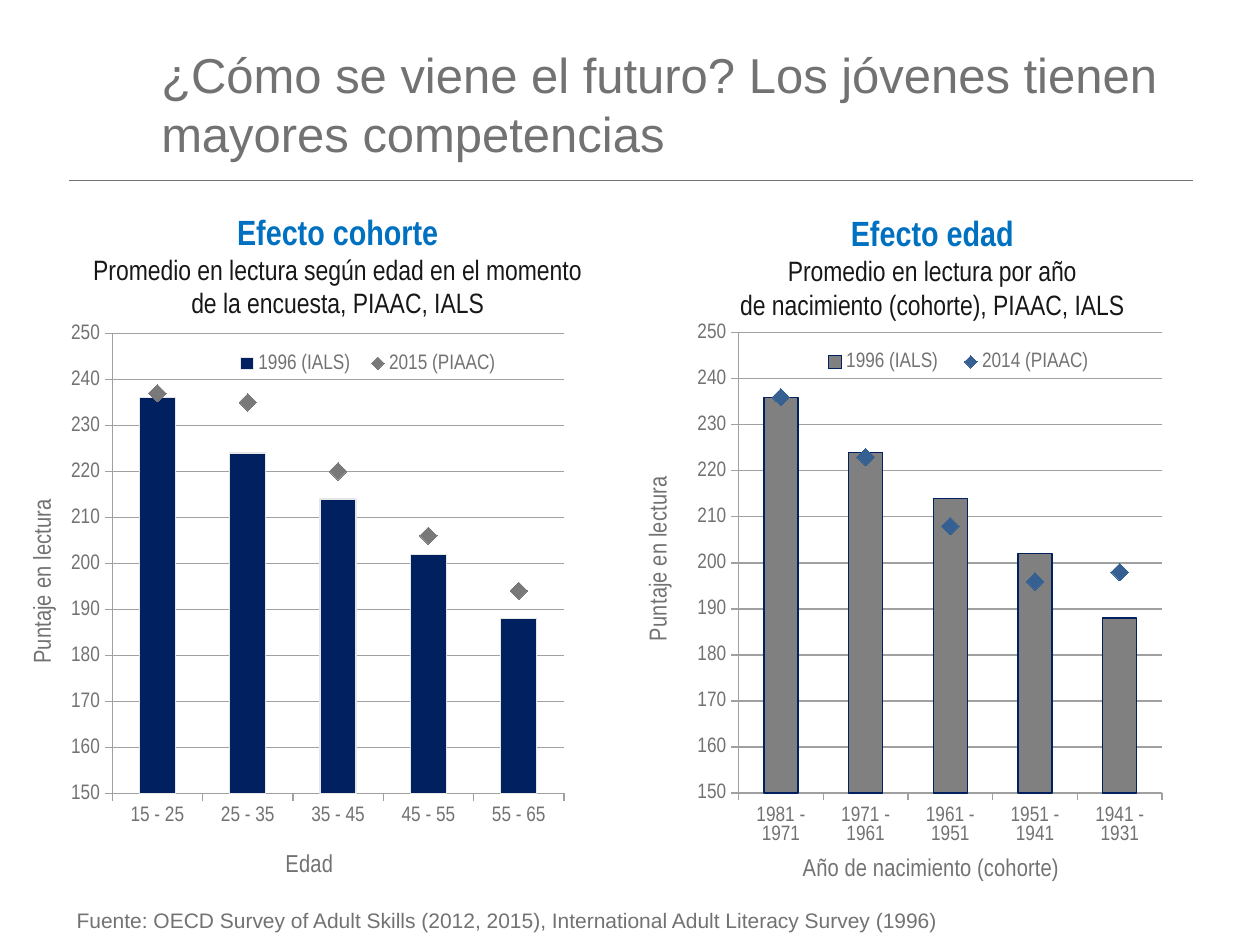
from dataclasses import dataclass

import pptx
import pptx.chart.data
import pptx.dml.color
import pptx.enum.chart
import pptx.enum.shapes
import pptx.enum.text
import pptx.oxml
import pptx.oxml.ns
import pptx.util
from pptx.util import Inches, Pt

qn = pptx.oxml.ns.qn


@dataclass(frozen=True)
class Theme:
    grey: str = "727272"
    blue: str = "0070C0"
    ink: str = "171717"
    grid: str = "A0A0A0"
    navy: str = "002060"
    body_font: str = "Arial"
    chart_font: str = "Arial Narrow"
    title: int = 28
    heading: int = 20
    subheading: int = 16
    axis_title: int = 14
    label: int = 12


THEME = Theme()


def rgb(colour):
    return pptx.dml.color.RGBColor.from_string(colour)


def style(font, name, size, colour, bold=False):
    font.name, font.size, font.bold = name, Pt(size), bold
    font.color.rgb = rgb(colour)


def stroke(line, colour, width=0.75):
    line.color.rgb = rgb(colour)
    line.width = Pt(width)


def add_title(slide, wording):
    title = slide.shapes.title
    title.left, title.top = Inches(1.18), Inches(0.26)
    title.width, title.height = Inches(8.11), Inches(1.12)
    frame = title.text_frame
    frame.text = wording
    frame.auto_size = pptx.enum.text.MSO_AUTO_SIZE.NONE
    frame.vertical_anchor = pptx.enum.text.MSO_ANCHOR.MIDDLE
    frame.paragraphs[0].alignment = pptx.enum.text.PP_ALIGN.LEFT
    style(frame.paragraphs[0].font, THEME.body_font, THEME.title, THEME.grey)


def add_rule(slide):
    rule = slide.shapes.add_connector(
        pptx.enum.shapes.MSO_CONNECTOR.STRAIGHT,
        Inches(0.55), Inches(1.43), Inches(9.47), Inches(1.43))
    stroke(rule.line, THEME.grey, 0.5)
    rule._element.spPr.append(pptx.oxml.parse_xml(
        f'<a:effectLst {pptx.oxml.ns.nsdecls("a")}/>'))


def add_lines(slide, left, top, width, height, lines, alignment, inset=0.1):
    """Add a text box from (wording, font, size, colour, bold) lines."""
    box = slide.shapes.add_textbox(
        Inches(left), Inches(top), Inches(width), Inches(height))
    frame = box.text_frame
    frame.word_wrap = False
    frame.margin_left = frame.margin_right = Inches(inset)
    for index, (wording, *look) in enumerate(lines):
        paragraph = frame.add_paragraph() if index else frame.paragraphs[0]
        paragraph.text = wording
        paragraph.alignment = alignment
        style(paragraph.font, *look)


def add_heading(slide, left, top, width, heading, details):
    lines = [(heading, THEME.chart_font, THEME.heading, THEME.blue, True)]
    lines += [(detail, THEME.chart_font, THEME.subheading, THEME.ink, False)
              for detail in details]
    add_lines(slide, left, top, width, 0.79, lines,
              pptx.enum.text.PP_ALIGN.CENTER, inset=0)


def set_layout(element, index, inner=False, **fractions):
    """Place a chart part by fractions of the chart's size."""
    for old in element.findall(qn("c:layout")):
        element.remove(old)
    target = '<c:layoutTarget val="inner"/>' if inner else ""
    modes = "".join(f'<c:{key}Mode val="edge"/>' for key in "xy")
    values = "".join(f'<c:{key} val="{value}"/>'
                     for key, value in fractions.items())
    element.insert(index, pptx.oxml.parse_xml(
        f'<c:layout {pptx.oxml.ns.nsdecls("c")}><c:manualLayout>'
        f'{target}{modes}{values}</c:manualLayout></c:layout>'))


def move_last_series_to_markers(chart, colour):
    """Turn the last column series into a line plot showing only markers."""
    bars = chart._chartSpace.chart.plotArea.find(qn("c:barChart"))
    series = bars.findall(qn("c:ser"))[-1]
    for invert in series.findall(qn("c:invertIfNegative")):
        series.remove(invert)
    axes = "".join(f'<c:axId val="{axis.get("val")}"/>'
                   for axis in bars.findall(qn("c:axId")))
    lines = pptx.oxml.parse_xml(
        f'<c:lineChart {pptx.oxml.ns.nsdecls("c")}>'
        f'<c:grouping val="standard"/><c:varyColors val="0"/>'
        f'<c:marker val="1"/>{axes}</c:lineChart>')
    lines.insert(2, series)
    bars.addnext(lines)

    points = chart.plots[1].series[0]
    points.smooth = False
    points.format.line.fill.background()
    points.marker.style = pptx.enum.chart.XL_MARKER_STYLE.DIAMOND
    points.marker.size = 10
    points.marker.format.fill.solid()
    points.marker.format.fill.fore_color.rgb = rgb(colour)
    points.marker.format.line.fill.background()


def format_axis(axis, wording, x, y):
    axis.major_tick_mark = pptx.enum.chart.XL_TICK_MARK.OUTSIDE
    axis.minor_tick_mark = pptx.enum.chart.XL_TICK_MARK.NONE
    style(axis.tick_labels.font, THEME.chart_font, THEME.label, THEME.grey)
    stroke(axis.format.line, THEME.grid)
    frame = axis.axis_title.text_frame
    frame.text = wording
    style(frame.paragraphs[0].font, THEME.chart_font, THEME.axis_title, THEME.grey)
    set_layout(axis.axis_title._element, 1, x=x, y=y)
    return frame


def add_score_chart(slide, place, categories, columns, markers, plot, legend,
                    category_title, score_title_at):
    column_name, scores, fill, outline = columns
    marker_name, later_scores, marker_colour = markers
    data = pptx.chart.data.CategoryChartData()
    data.categories = categories
    data.add_series(column_name, scores)
    data.add_series(marker_name, later_scores)
    chart = slide.shapes.add_chart(
        pptx.enum.chart.XL_CHART_TYPE.COLUMN_CLUSTERED,
        *map(Inches, place), data).chart
    chart.has_title = False
    style(chart.font, THEME.chart_font, THEME.label, THEME.grey)

    # Columns and markers
    chart.plots[0].gap_width = 150
    chart.plots[0].vary_by_categories = False
    bars = chart.plots[0].series[0]
    bars.format.fill.solid()
    bars.format.fill.fore_color.rgb = rgb(fill)
    stroke(bars.format.line, outline)
    move_last_series_to_markers(chart, marker_colour)

    # Axes
    format_axis(chart.category_axis, *category_title)
    score_axis = chart.value_axis
    score_title = format_axis(score_axis, "Puntaje en lectura", *score_title_at)
    score_title._txBody.bodyPr.set("rot", "-5400000")
    score_axis.minimum_scale, score_axis.maximum_scale = 150, 250
    score_axis.major_unit = 10
    stroke(score_axis.major_gridlines.format.line, THEME.grid)

    # Legend and plot area
    chart.has_legend = True
    chart.legend.position = pptx.enum.chart.XL_LEGEND_POSITION.RIGHT
    chart.legend.include_in_layout = False
    style(chart.legend.font, THEME.chart_font, THEME.label, THEME.grey)
    set_layout(chart.legend._element, 1, **dict(zip("xywh", legend)))
    set_layout(chart._chartSpace.chart.plotArea, 0, inner=True,
               **dict(zip("xywh", plot)))


def main():
    deck = pptx.Presentation()
    deck.slide_width, deck.slide_height = Inches(10), Inches(7.5)
    slide = deck.slides.add_slide(deck.slide_layouts[5])
    add_title(slide, "¿Cómo se viene el futuro? Los jóvenes tienen mayores competencias")
    add_rule(slide)
    first_scores = (236, 224, 214, 202, 188)

    # Cohort effect
    add_heading(slide, 0.67, 1.62, 4.02, "Efecto cohorte",
                ("Promedio en lectura según edad en el momento", "de la encuesta, PIAAC, IALS"))
    add_score_chart(
        slide, (0.2, 2.41, 4.32, 4.74),
        [f"{age} - {age + 10}" for age in range(15, 65, 10)],
        ("1996 (IALS)", first_scores, THEME.navy, "E6E6E6"),
        ("2015 (PIAAC)", (237, 235, 220, 206, 194), "797979"),
        plot=(0.16, 0.05, 0.83, 0.77), legend=(0.37, 0.07, 0.52, 0.06),
        category_title=("Edad", 0.47, 0.91), score_title_at=(0, 0.32))

    # Age effect
    add_heading(slide, 5.63, 1.63, 3.54, "Efecto edad",
                ("Promedio en lectura por año", "de nacimiento (cohorte), PIAAC, IALS"))
    add_score_chart(
        slide, (5, 2.41, 4.31, 4.65),
        [f"{year} - {year - 10}" for year in range(1981, 1931, -10)],
        ("1996 (IALS)", first_scores, "808080", THEME.navy),
        ("2014 (PIAAC)", (236, 223, 208, 196, 198), "376092"),
        plot=(0.2, 0.05, 0.78, 0.79), legend=(0.33, 0.07, 0.55, 0.06),
        category_title=("Año de nacimiento (cohorte)", 0.31, 0.94),
        score_title_at=(0.02, 0.29))

    # Source line
    add_lines(slide, 0.51, 7.15, 7.2, 0.3,
              [("Fuente: OECD Survey of Adult Skills (2012, 2015), International Adult Literacy Survey (1996)",
                THEME.body_font, THEME.label, THEME.grey, False)],
              pptx.enum.text.PP_ALIGN.LEFT)
    deck.save("out.pptx")


if __name__ == "__main__":
    main()
